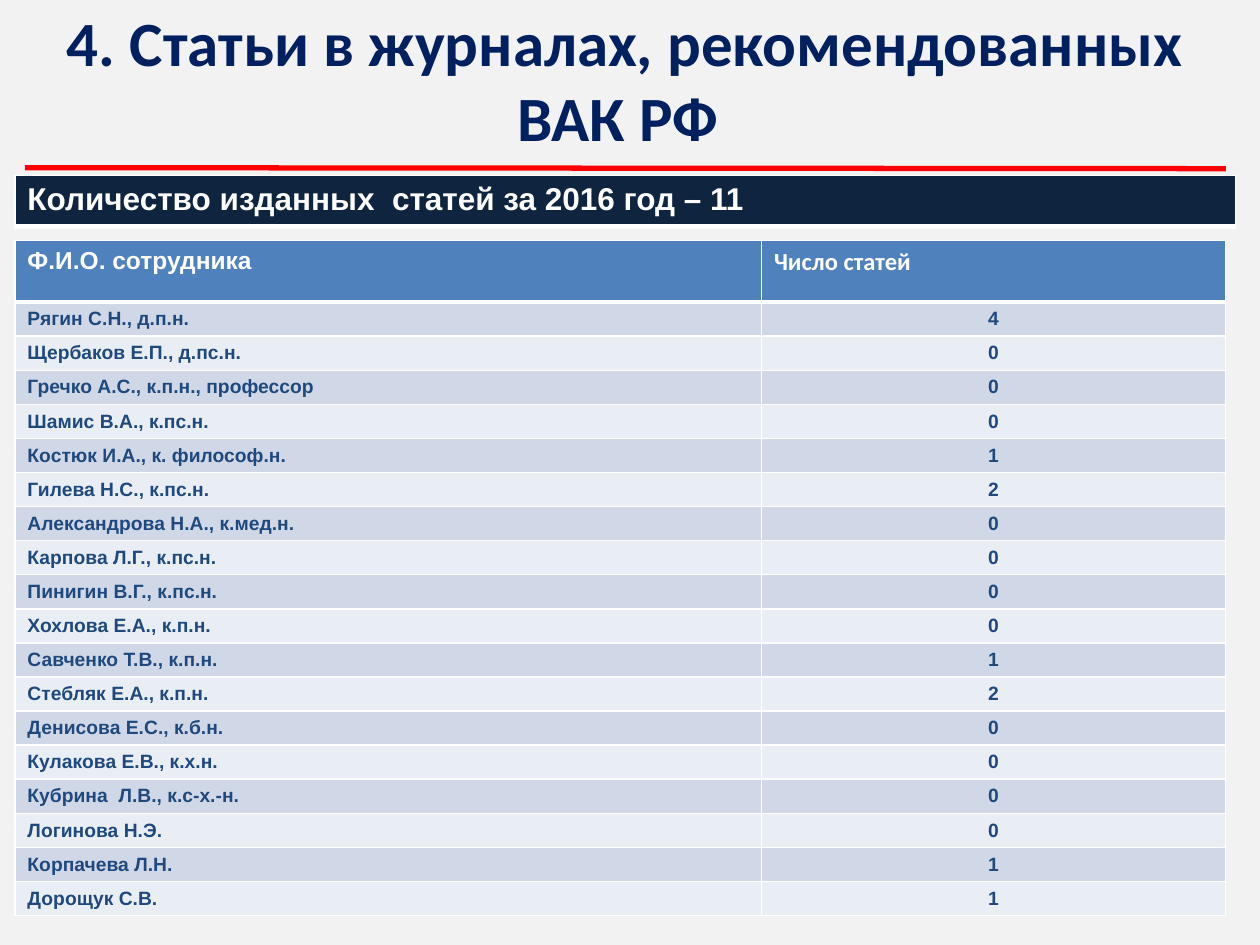
from dataclasses import dataclass

from lxml import etree
from pptx import Presentation
from pptx.dml.color import RGBColor
from pptx.enum import shapes, text
from pptx.oxml.ns import qn
from pptx.util import Cm, Pt

COLORS = {
    "background": "F2F2F2",
    "title": "002060",
    "rule": "FF0000",
    "banner": "0F243E",
    "header": "4F81BD",
    "odd": "D0D8E8",
    "even": "E9EDF4",
    "body_text": "1F497D",
    "white": "FFFFFF",
}


@dataclass
class CellStyle:
    fill: str
    color: str = "white"
    size: float = 14
    font: str = "Arial"
    align: text.PP_ALIGN = text.PP_ALIGN.LEFT
    bottom: float = 1


@dataclass
class Employee:
    name: str
    articles: int


EMPLOYEES = [
    Employee("Рягин С.Н., д.п.н.", 4),
    Employee("Щербаков Е.П., д.пс.н.", 0),
    Employee("Гречко А.С., к.п.н., профессор", 0),
    Employee("Шамис В.А., к.пс.н.", 0),
    Employee("Костюк И.А., к. философ.н.", 1),
    Employee("Гилева Н.С., к.пс.н.", 2),
    Employee("Александрова Н.А., к.мед.н.", 0),
    Employee("Карпова Л.Г., к.пс.н.", 0),
    Employee("Пинигин В.Г., к.пс.н.", 0),
    Employee("Хохлова Е.А., к.п.н.", 0),
    Employee("Савченко Т.В., к.п.н.", 1),
    Employee("Стебляк Е.А., к.п.н.", 2),
    Employee("Денисова Е.С., к.б.н.", 0),
    Employee("Кулакова Е.В., к.х.н.", 0),
    Employee("Кубрина  Л.В., к.с-х.-н.", 0),
    Employee("Логинова Н.Э.", 0),
    Employee("Корпачева Л.Н.", 1),
    Employee("Дорощук С.В.", 1),
]


def rgb(name: str) -> RGBColor:
    return RGBColor.from_string(COLORS[name])


def write(tf, words: str, font: str, size: float, color: str, align) -> None:
    """Put one bold paragraph into a text frame."""
    p = tf.paragraphs[0]
    p.text = words
    p.alignment = align
    r = p.runs[0]
    r.font.name, r.font.size, r.font.bold = font, Pt(size), True
    r.font.color.rgb = rgb(color)


def add_borders(cell, bottom: float) -> None:
    """White edges; must run before the fill, which follows them in the XML."""
    tc_pr = cell._tc.get_or_add_tcPr()
    for edge, width in (("L", 1), ("R", 1), ("T", 1), ("B", bottom)):
        ln = etree.SubElement(tc_pr, qn(f"a:ln{edge}"), w=str(Pt(width)))
        fill = etree.SubElement(ln, qn("a:solidFill"))
        etree.SubElement(fill, qn("a:srgbClr"), val=COLORS["white"])


def fill_cell(cell, words: str, style: CellStyle) -> None:
    add_borders(cell, style.bottom)
    cell.fill.solid()
    cell.fill.fore_color.rgb = rgb(style.fill)
    write(cell.text_frame, words, style.font, style.size, style.color, style.align)


def add_table(s, left: float, top: float, widths: list[float], heights: list[float]):
    """Add a table at a place and with column and row sizes in centimetres."""
    frame = s.shapes.add_table(len(heights), len(widths), Cm(left), Cm(top),
                               Cm(sum(widths)), Cm(sum(heights)))
    table = frame.table
    for column, width in zip(table.columns, widths):
        column.width = Cm(width)
    for row, height in zip(table.rows, heights):
        row.height = Cm(height)
    return table


def add_title(s, words: str) -> None:
    title = s.shapes.title
    title.left, title.top, title.width, title.height = Cm(0.6), Cm(0), Cm(24), Cm(3.18)
    tf = title.text_frame
    tf.word_wrap = True
    tf.auto_size = text.MSO_AUTO_SIZE.NONE
    tf.vertical_anchor = text.MSO_ANCHOR.MIDDLE
    write(tf, words, "Calibri", 36, "title", text.PP_ALIGN.CENTER)


def add_rule(s) -> None:
    rule = s.shapes.add_connector(shapes.MSO_CONNECTOR.STRAIGHT,
                                  Cm(0.5), Cm(3.38), Cm(24.71), Cm(3.4))
    rule.line.color.rgb = rgb("rule")
    rule.line.width = Pt(3)
    etree.SubElement(rule._element.spPr, qn("a:effectLst"))


def add_banner(s, words: str) -> None:
    banner = add_table(s, 0.3, 3.54, [24.61], [1.02])
    fill_cell(banner.cell(0, 0), words, CellStyle("banner", size=18, bottom=3))


def add_articles(s, employees: list[Employee]) -> None:
    table = add_table(s, 0.3, 4.85, [15.05, 9.35], [1.24] + [0.66] * len(employees))
    for column, (words, font) in enumerate((("Ф.И.О. сотрудника", "Arial"),
                                            ("Число статей", "Calibri"))):
        fill_cell(table.cell(0, column), words, CellStyle("header", font=font, bottom=3))
    for row, employee in enumerate(employees, start=1):
        band = "odd" if row % 2 else "even"
        for column, (words, align) in enumerate(
                ((employee.name, text.PP_ALIGN.LEFT),
                 (str(employee.articles), text.PP_ALIGN.CENTER))):
            fill_cell(table.cell(row, column), words,
                      CellStyle(band, "body_text", 11, align=align))


def main() -> None:
    prs = Presentation()
    prs.slide_width, prs.slide_height = Cm(25.4), Cm(19.05)
    s = prs.slides.add_slide(prs.slide_layouts[5])
    s.background.fill.solid()
    s.background.fill.fore_color.rgb = rgb("background")
    add_title(s, "4. Статьи в журналах, рекомендованных ВАК РФ ")
    add_rule(s)
    add_banner(s, "Количество изданных  статей за 2016 год – 11")
    add_articles(s, EMPLOYEES)
    prs.save("out.pptx")


if __name__ == "__main__":
    main()
